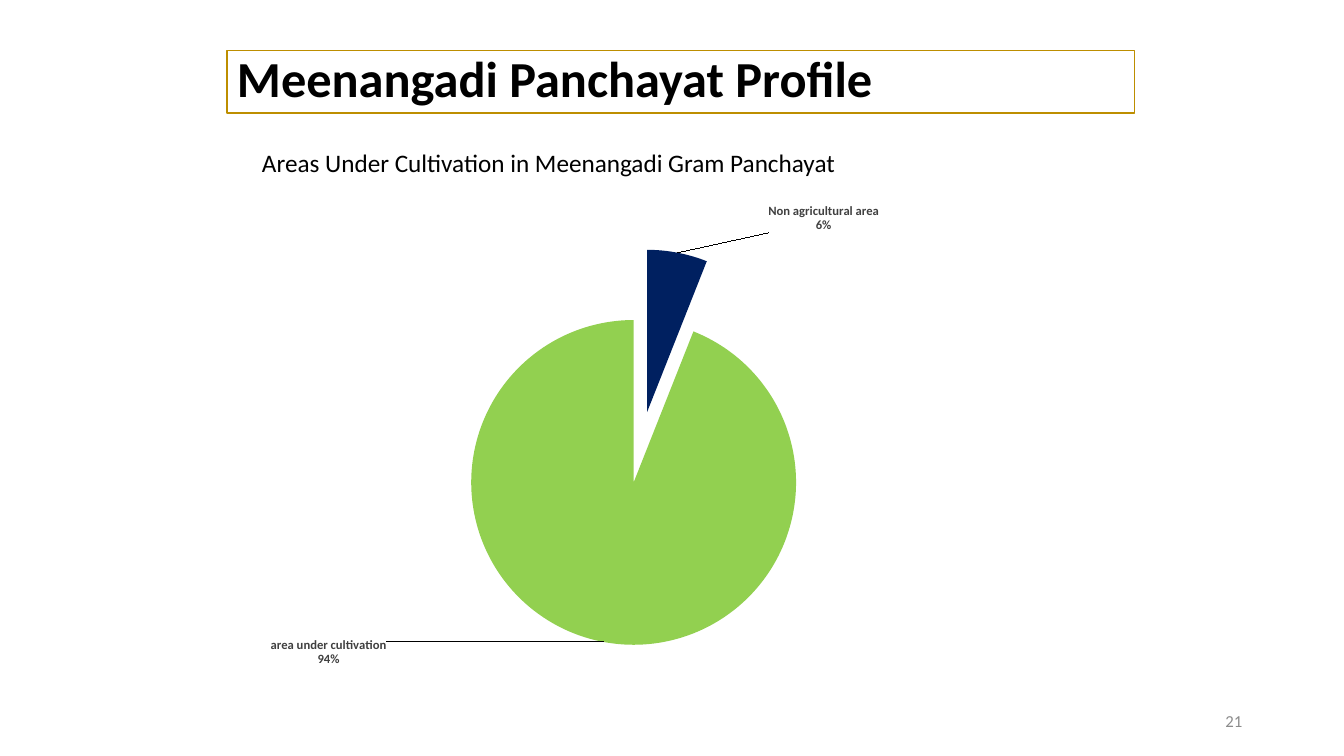
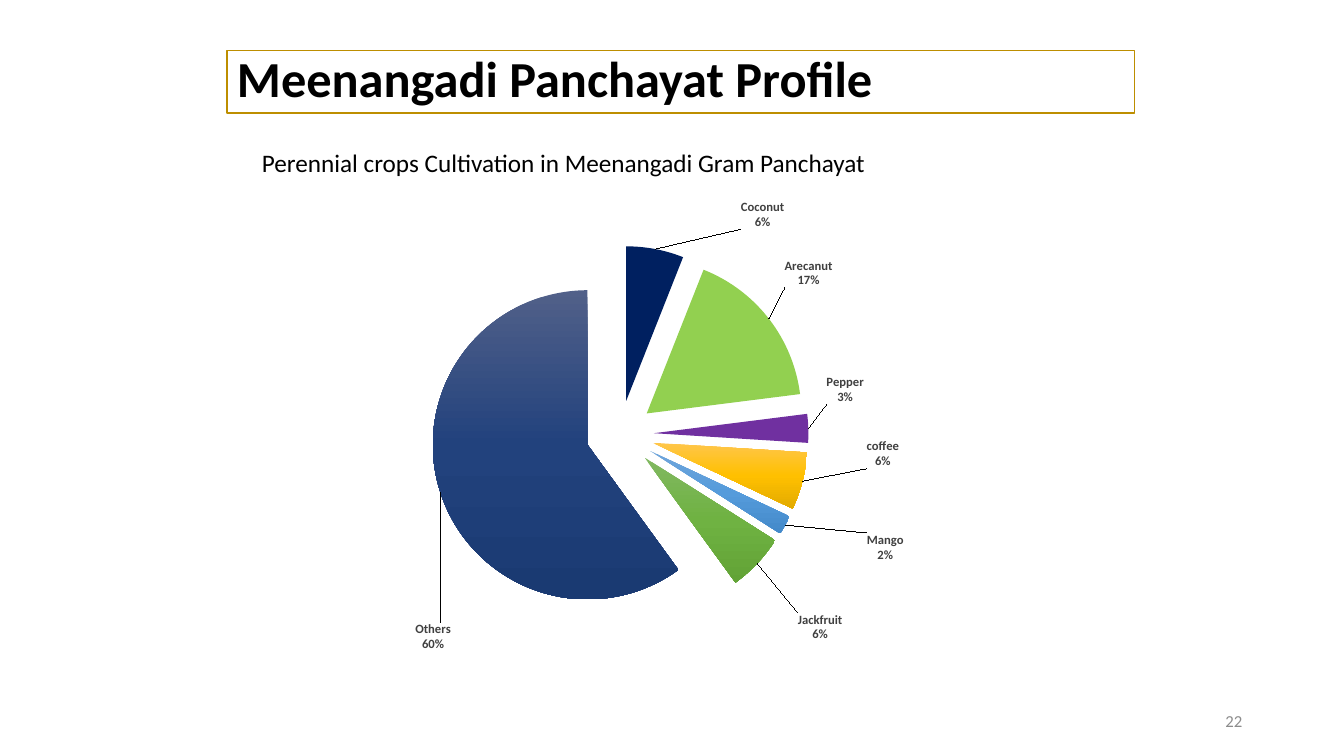
from copy import deepcopy

from lxml import etree
from pptx import Presentation
from pptx.chart.data import CategoryChartData
from pptx.dml.color import RGBColor
from pptx.enum.chart import XL_CHART_TYPE, XL_LABEL_POSITION
from pptx.enum.text import MSO_ANCHOR, MSO_AUTO_SIZE, PP_ALIGN
from pptx.oxml.ns import qn
from pptx.util import Inches, Pt

FONT = "Calibri"
BLACK = RGBColor(0x00, 0x00, 0x00)
GOLD = RGBColor(0xBD, 0x8E, 0x00)
GREY = RGBColor(0x8C, 0x8C, 0x8C)
LABEL_GREY = RGBColor(0x40, 0x40, 0x40)
NAVY = RGBColor(0x00, 0x20, 0x60)
LIME = RGBColor(0x92, 0xD0, 0x50)
PURPLE = RGBColor(0x70, 0x30, 0xA0)
# Gradients run from top to bottom, with stops at 0, 0.5 and 1
AMBER = tuple(map(RGBColor.from_string, ("FFC64B", "FFC000", "E3AB00")))
SKY = tuple(map(RGBColor.from_string, ("71A6DB", "559BDB", "448ACA")))
LEAF = tuple(map(RGBColor.from_string, ("81B861", "6FB242", "62A336")))
DUSK = tuple(map(RGBColor.from_string, ("516089", "22427D", "1A3A72")))

TITLE = "Meenangadi Panchayat Profile"
PLOT_AREA = {"x": 0.035, "y": 0.139, "w": 0.814, "h": 0.756}
EXPLOSION = 22

# Slices: category, share, fill, label shift in inches (right, down)
SLIDES = [
    {
        "number": 21,
        "subtitle": "Areas Under Cultivation in Meenangadi Gram Panchayat",
        "subtitle_width": 6.08,
        "chart_size": (9.46, 5.2),
        "slices": [
            ("Non agricultural area", 0.06, NAVY, (0.89, -0.14)),
            ("area under cultivation", 0.94, LIME, (-2.14, -0.1)),
        ],
    },
    {
        "number": 22,
        "subtitle": "Perennial crops Cultivation in Meenangadi Gram Panchayat",
        "subtitle_width": 7.17,
        "chart_size": (9, 4.95),
        "slices": [
            ("Coconut", 0.06, NAVY, (0.84, -0.14)),
            ("Arecanut", 0.17, LIME, (0.11, -0.27)),
            ("Pepper", 0.03, PURPLE, (0.12, -0.38)),
            ("coffee", 0.06, AMBER, (0.58, -0.43)),
            ("Mango", 0.02, SKY, (0.76, 0.05)),
            ("Jackfruit", 0.06, LEAF, (0.36, 0.45)),
            ("Others", 0.6, DUSK, (0.16, 1.27)),
        ],
    },
]


def style_font(font, size, color, bold=False):
    font.name, font.size, font.bold = FONT, Pt(size), bold
    font.color.rgb = color


def add_title(slide):
    title = slide.shapes.title
    title.left, title.top = Inches(2.25), Inches(0.5)
    title.width, title.height = Inches(9), Inches(0.62)
    title.line.color.rgb = GOLD
    title.line.width = Pt(1)
    text_frame = title.text_frame
    text_frame.text = TITLE
    text_frame.auto_size = MSO_AUTO_SIZE.NONE
    text_frame.vertical_anchor = MSO_ANCHOR.MIDDLE
    paragraph = text_frame.paragraphs[0]
    paragraph.alignment = PP_ALIGN.LEFT
    paragraph.line_spacing = 0.9
    style_font(paragraph.runs[0].font, 36, BLACK, True)


def add_text(slide, text, left, top, width, size, color, align=PP_ALIGN.LEFT):
    box = slide.shapes.add_textbox(Inches(left), Inches(top), Inches(width), Inches(0.4))
    text_frame = box.text_frame
    text_frame.word_wrap = True
    text_frame.vertical_anchor = MSO_ANCHOR.MIDDLE
    text_frame.text = text
    paragraph = text_frame.paragraphs[0]
    paragraph.alignment = align
    style_font(paragraph.runs[0].font, size, color)


def manual_layout(**values):
    layout = etree.Element(qn("c:layout"))
    manual = etree.SubElement(layout, qn("c:manualLayout"))
    for name, value in values.items():
        etree.SubElement(manual, qn(f"c:{name}")).set("val", str(value))
    return layout


def fill_slice(fill, color):
    if isinstance(color, RGBColor):
        fill.solid()
        fill.fore_color.rgb = color
        return
    fill.gradient()
    fill.gradient_angle = 270
    stop_list = fill._xPr.find(".//" + qn("a:gsLst"))
    stop_list.append(deepcopy(stop_list[-1]))
    for index, (stop, stop_color) in enumerate(zip(fill.gradient_stops, color)):
        stop.position = index / 2
        stop.color.rgb = stop_color


def add_pie(slide, size, slices):
    width, height = size
    data = CategoryChartData(number_format="0%")
    data.categories = [name for name, *_ in slices]
    data.add_series("Series 1", [share for _, share, *_ in slices])
    chart = slide.shapes.add_chart(
        XL_CHART_TYPE.PIE, Inches(2.17), Inches(1.75), Inches(width), Inches(height), data
    ).chart
    chart.has_title = False
    chart.has_legend = False
    style_font(chart.font, 10, BLACK)

    # Plot area and exploded slices
    plot_area = chart._chartSpace.find(".//" + qn("c:plotArea"))
    for layout in plot_area.findall(qn("c:layout")):
        plot_area.remove(layout)
    plot_area.insert(0, manual_layout(
        layoutTarget="inner", xMode="edge", yMode="edge", **PLOT_AREA))
    chart.plots[0].vary_by_categories = True
    series = chart.plots[0].series[0]
    explosion = etree.Element(qn("c:explosion"))
    explosion.set("val", str(EXPLOSION))
    series._element.find(qn("c:tx")).addnext(explosion)

    # Labels: category above share
    labels = series.data_labels
    labels.show_category_name = True
    labels.show_value = True
    labels.number_format = "0%"
    labels.number_format_is_linked = False
    labels.position = XL_LABEL_POSITION.OUTSIDE_END
    style_font(labels.font, 9, LABEL_GREY, True)
    for index, (_, _, color, _) in enumerate(slices):
        point = series.points[index]
        fill_slice(point.format.fill, color)
        style_font(point.data_label.font, 9, LABEL_GREY, True)
        point.data_label.position = XL_LABEL_POSITION.OUTSIDE_END

    # Shift each label away from its slice
    labels_element = series._element.find(qn("c:dLbls"))
    for label, (*_, (right, down)) in zip(labels_element.findall(qn("c:dLbl")), slices):
        label.find(qn("c:idx")).addnext(
            manual_layout(x=round(right / width, 4), y=round(down / height, 4)))
        label.find(qn("c:showCatName")).set("val", "1")
    for bubble_flag in list(labels_element.iter(qn("c:showBubbleSize"))):
        separator = etree.Element(qn("c:separator"))
        separator.text = "\n"
        bubble_flag.addnext(separator)


def main():
    presentation = Presentation()
    presentation.slide_width, presentation.slide_height = Inches(13.33), Inches(7.5)
    for content in SLIDES:
        slide = presentation.slides.add_slide(presentation.slide_layouts[5])
        add_title(slide)
        add_text(slide, content["subtitle"], 2.5, 1.41, content["subtitle_width"], 18, BLACK)
        add_pie(slide, content["chart_size"], content["slices"])
        add_text(slide, str(content["number"]), 9.42, 6.95, 3, 12, GREY, PP_ALIGN.RIGHT)
    presentation.save("out.pptx")


if __name__ == "__main__":
    main()
